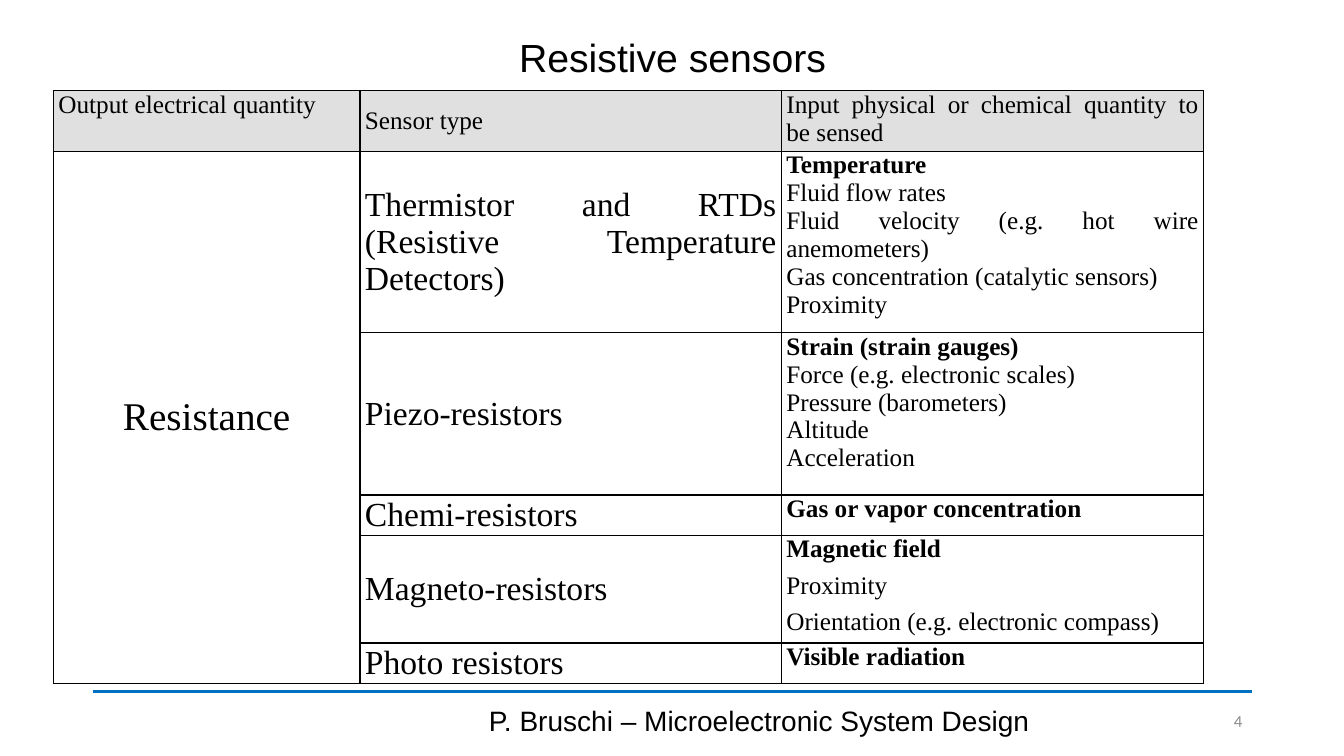
import pptx
import pptx.util
import pptx.dml.color
import pptx.enum.shapes
import pptx.enum.text
import pptx.oxml
import pptx.oxml.ns
from dataclasses import dataclass

Inches = pptx.util.Inches
Pt = pptx.util.Pt
Align = pptx.enum.text.PP_ALIGN
Anchor = pptx.enum.text.MSO_ANCHOR


@dataclass(frozen=True)
class Theme:
    ink: str = "000000"
    muted: str = "8C8C8C"
    accent: str = "0070C0"
    header_fill: str = "E0E0E0"
    sans: str = "Arial"
    serif: str = "Times New Roman"
    number_font: str = "Calibri"
    title: int = 28
    sensor: int = 24
    footer: int = 20
    body: int = 18
    number: int = 12


THEME = Theme()
COLUMN_WIDTHS = [3.04, 4.18, 4.19]
HEADER_HEIGHT = 0.6
HEADERS = ["Output electrical quantity", "Sensor type",
           "Input physical or chemical quantity to be sensed"]
# Sensor type, row height, space after paragraphs, sensed quantities (main one first)
SENSORS = [
    ("Thermistor and RTDs (Resistive Temperature Detectors)", 1.66, 0,
     ["Temperature", "Fluid flow rates", "Fluid velocity (e.g. hot wire anemometers)",
      "Gas concentration (catalytic sensors)", "Proximity"]),
    ("Piezo-resistors", 1.61, 0,
     ["Strain (strain gauges)", "Force (e.g. electronic scales)",
      "Pressure (barometers)", "Altitude", "Acceleration"]),
    ("Chemi-resistors", 0.4, 6, ["Gas or vapor concentration"]),
    ("Magneto-resistors", 1.0, 6,
     ["Magnetic field", "Proximity", "Orientation (e.g. electronic compass)"]),
    ("Photo resistors", 0.37, 6, ["Visible radiation"]),
]


def color(value):
    return pptx.dml.color.RGBColor.from_string(value)


def write(para, text, size, font, ink=THEME.ink, bold=False, align=Align.CENTER, after=0):
    para.alignment = align
    para.space_after = Pt(after)
    span = para.add_run()
    span.text = text
    span.font.size = Pt(size)
    span.font.name = font
    span.font.bold = bold
    span.font.color.rgb = color(ink)


def add_text(page, box, text, size, font, **style):
    frame = page.shapes.add_textbox(*map(Inches, box)).text_frame
    frame.word_wrap = True
    frame.vertical_anchor = Anchor.MIDDLE
    write(frame.paragraphs[0], text, size, font, **style)
    return frame


def add_borders(cell):
    properties = cell._tc.get_or_add_tcPr()
    for index, side in enumerate(["lnL", "lnR", "lnT", "lnB"]):
        border = pptx.oxml.parse_xml(
            f'<a:{side} {pptx.oxml.ns.nsdecls("a")} w="{Pt(1)}"><a:solidFill>'
            f'<a:srgbClr val="{THEME.ink}"/></a:solidFill></a:{side}>')
        properties.insert(index, border)


def fill_cell(cell, lines, size, after, anchor=Anchor.MIDDLE, align=Align.JUSTIFY,
              lead_bold=False):
    cell.vertical_anchor = anchor
    frame = cell.text_frame
    for index, line in enumerate(lines):
        para = frame.paragraphs[0] if index == 0 else frame.add_paragraph()
        write(para, line, size, THEME.serif, bold=lead_bold and index == 0,
              align=align, after=after)


def add_sensor_table(page, left, top):
    heights = [HEADER_HEIGHT] + [sensor[1] for sensor in SENSORS]
    table = page.shapes.add_table(
        len(heights), len(COLUMN_WIDTHS), Inches(left), Inches(top),
        Inches(sum(COLUMN_WIDTHS)), Inches(sum(heights))).table
    table.first_row = table.horz_banding = False
    for column, width in zip(table.columns, COLUMN_WIDTHS):
        column.width = Inches(width)

    # Cell margins, fills and borders
    for index, (row, height) in enumerate(zip(table.rows, heights)):
        row.height = Inches(height)
        for cell in row.cells:
            cell.margin_left = cell.margin_right = Inches(0.05)
            cell.margin_top = cell.margin_bottom = 0
            if index == 0:
                cell.fill.solid()
                cell.fill.fore_color.rgb = color(THEME.header_fill)
            else:
                cell.fill.background()
            add_borders(cell)

    # Header row
    for column, header in enumerate(HEADERS):
        fill_cell(table.cell(0, column), [header], THEME.body, 6,
                  anchor=Anchor.MIDDLE if column == 1 else Anchor.TOP)

    # Output quantity shared by every sensor
    resistance = table.cell(1, 0)
    resistance.merge(table.cell(len(SENSORS), 0))
    fill_cell(resistance, ["Resistance"], THEME.title, 6, align=Align.CENTER)

    # Sensors and what they sense
    for row, (sensor, _, after, quantities) in enumerate(SENSORS, start=1):
        fill_cell(table.cell(row, 1), [sensor], THEME.sensor, after)
        fill_cell(table.cell(row, 2), quantities, THEME.body, after,
                  anchor=Anchor.TOP, lead_bold=True)


def add_footer(page, left, top, width):
    rule = page.shapes.add_connector(
        pptx.enum.shapes.MSO_CONNECTOR.STRAIGHT,
        Inches(left), Inches(top), Inches(left + width), Inches(top))
    rule.line.color.rgb = color(THEME.accent)
    rule.line.width = Pt(2.75)
    rule._element.spPr.append(
        pptx.oxml.parse_xml(f'<a:effectLst {pptx.oxml.ns.nsdecls("a")}/>'))
    text_top = top + 0.09
    add_text(page, (left + 3.5, text_top, 6.22, 0.4),
             "P. Bruschi – Microelectronic System Design", THEME.footer, THEME.sans)
    add_text(page, (left + width - 0.96, text_top, 0.96, 0.4), "4",
             THEME.number, THEME.number_font, ink=THEME.muted, align=Align.RIGHT)


def main():
    deck = pptx.Presentation()
    deck.slide_width = Inches(13.33)
    deck.slide_height = Inches(7.5)
    page = deck.slides.add_slide(deck.slide_layouts[6])
    title = add_text(page, (0.92, 0.23, 11.5, 0.72), "Resistive sensors",
                     THEME.title, THEME.sans)
    title.paragraphs[0].line_spacing = 0.9
    add_sensor_table(page, 0.53, 0.9)
    add_footer(page, 0.92, 6.86, 11.5)
    deck.save("out.pptx")


if __name__ == "__main__":
    main()
